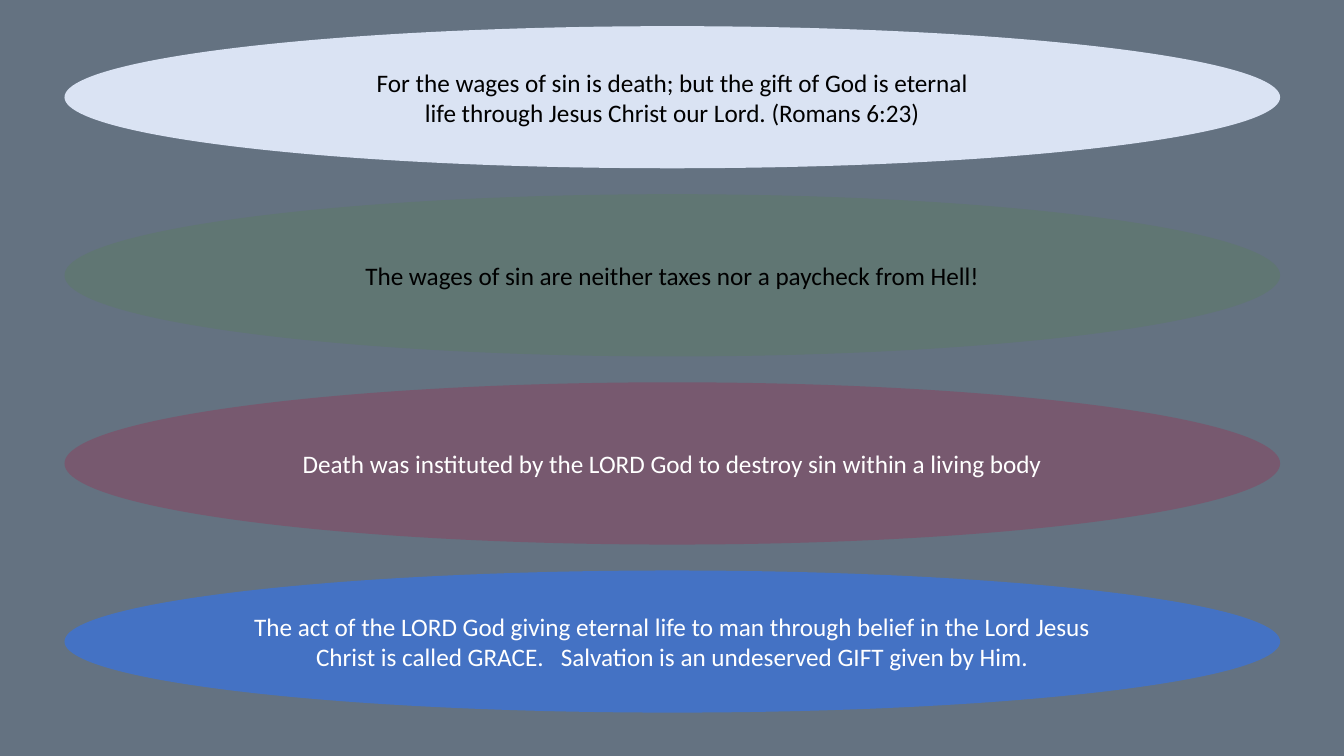
from dataclasses import dataclass

from pptx import Presentation
from pptx.dml.color import RGBColor
from pptx.enum.shapes import MSO_SHAPE as Preset
from pptx.enum.text import MSO_ANCHOR as Anchor, PP_ALIGN as Align
from pptx.slide import Slide
from pptx.text.text import TextFrame
from pptx.util import Pt

LEFT, WIDTH = 46.1, 868.3
TOP, GAP = 18.7, 18.5
BLACK, WHITE = "000000", "FFFFFF"


@dataclass
class Statement:
    words: str
    height: float
    fill: str
    color: str
    caption_width: float = 0  # above zero: words sit in a box of their own


STATEMENTS = [
    Statement(
        "For the wages of sin is death; but the gift of God is eternal life "
        "through Jesus Christ our Lord. (Romans 6:23)",
        101.5, "DAE3F3", BLACK, 454.3),
    Statement(
        "The wages of sin are neither taxes nor a paycheck from Hell!",
        115.9, "607673", BLACK),
    Statement(
        "Death was instituted by the LORD God to destroy sin within a living body",
        115.9, "77596F", WHITE),
    Statement(
        "The act of the LORD God giving eternal life to man through belief in "
        "the Lord Jesus Christ is called GRACE.   Salvation is an undeserved "
        "GIFT given by Him.",
        101.5, "4472C4", WHITE),
]


def rgb(value: str) -> RGBColor:
    return RGBColor.from_string(value)


def write(frame: TextFrame, statement: Statement) -> None:
    frame.word_wrap = True
    frame.vertical_anchor = Anchor.MIDDLE
    para = frame.paragraphs[0]
    para.alignment = Align.CENTER
    span = para.add_run()
    span.text = statement.words
    span.font.name = "Calibri"
    span.font.size = Pt(18)
    span.font.color.rgb = rgb(statement.color)


def draw_statement(page: Slide, statement: Statement, top: float) -> None:
    ellipse = page.shapes.add_shape(
        Preset.OVAL, Pt(LEFT), Pt(top), Pt(WIDTH), Pt(statement.height))
    ellipse.shadow.inherit = False
    ellipse.fill.solid()
    ellipse.fill.fore_color.rgb = rgb(statement.fill)
    ellipse.line.fill.background()
    holder = ellipse
    if statement.caption_width:
        # Caption centred on its ellipse
        height = 51.1
        holder = page.shapes.add_textbox(
            Pt(LEFT + (WIDTH - statement.caption_width) / 2),
            Pt(top + (statement.height - height) / 2),
            Pt(statement.caption_width), Pt(height))
    write(holder.text_frame, statement)


def main() -> None:
    # Page and background
    deck = Presentation()
    deck.slide_width, deck.slide_height = Pt(960), Pt(540)
    page = deck.slides.add_slide(deck.slide_layouts[6])
    page.background.fill.solid()
    page.background.fill.fore_color.rgb = rgb("647281")

    # Ellipses stacked with equal gaps
    top = TOP
    for statement in STATEMENTS:
        draw_statement(page, statement, top)
        top += statement.height + GAP

    deck.save("out.pptx")


if __name__ == "__main__":
    main()
